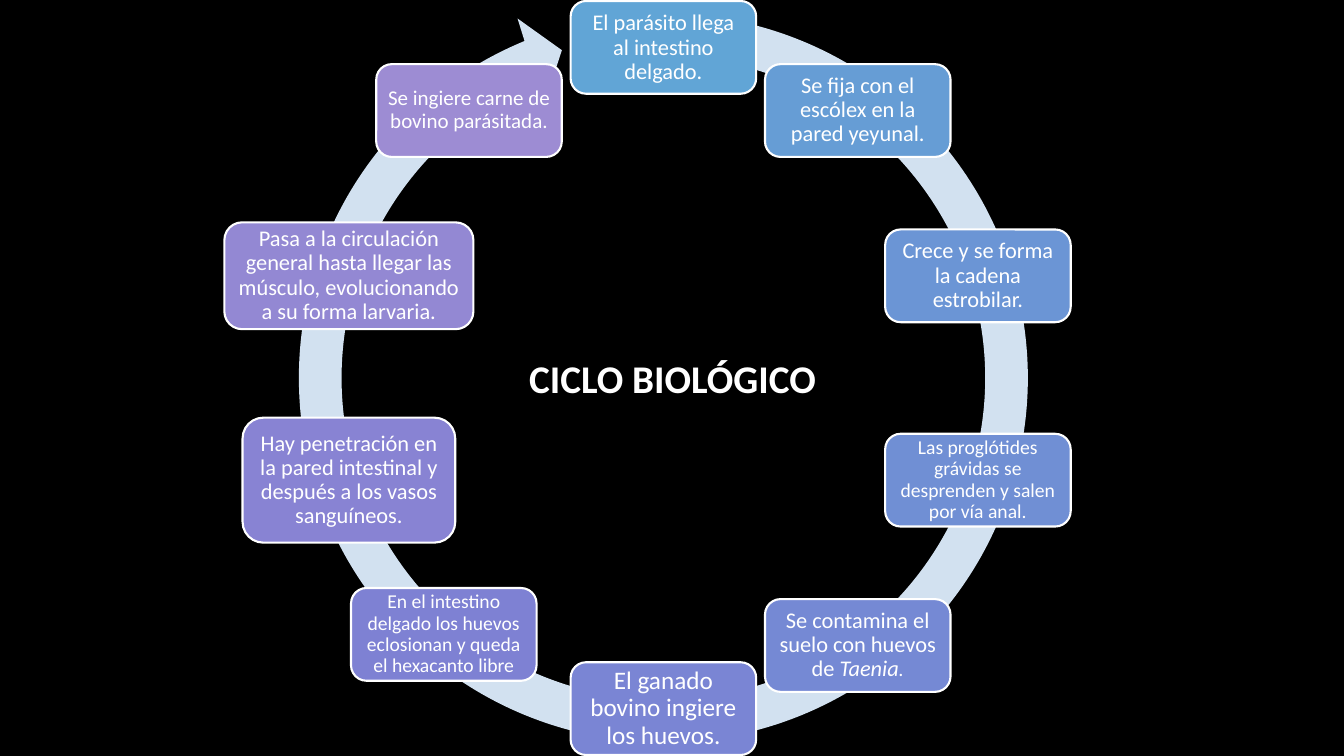
from math import cos, radians, sin

from pptx import Presentation
from pptx.dml.color import RGBColor
from pptx.enum.shapes import MSO_SHAPE
from pptx.enum.text import MSO_ANCHOR, MSO_AUTO_SIZE, PP_ALIGN
from pptx.util import Inches, Pt

BLACK = RGBColor(0x00, 0x00, 0x00)
WHITE = RGBColor(0xFF, 0xFF, 0xFF)
RING = RGBColor(0xD2, 0xE1, 0xF0)
STAGE_COLOURS = [
    RGBColor(0x61, 0xA5, 0xD6), RGBColor(0x66, 0x9D, 0xD5),
    RGBColor(0x6B, 0x95, 0xD5), RGBColor(0x70, 0x8F, 0xD4),
    RGBColor(0x75, 0x89, 0xD4), RGBColor(0x7A, 0x85, 0xD4),
    RGBColor(0x7E, 0x81, 0xD3), RGBColor(0x88, 0x83, 0xD3),
    RGBColor(0x93, 0x88, 0xD3), RGBColor(0x9D, 0x8C, 0xD3),
]
FONT = "Calibri"
CARD = (1.84, 0.92)

# Each stage, clockwise from the top: card size and runs (text, size, italic)
STAGES = [
    (CARD, [("El parásito llega al intestino delgado.", 16, False)]),
    (CARD, [("Se fija con el escólex en la pared yeyunal.", 16, False)]),
    (CARD, [("Crece y se forma la cadena estrobilar.", 16, False)]),
    (CARD, [("Las proglótides grávidas se desprenden y salen por vía anal.",
             14, False)]),
    (CARD, [("Se contamina el suelo con huevos de ", 16, False),
            ("Taenia", 16, True), (".", 14, True)]),
    (CARD, [("El ganado bovino ingiere los huevos.", 18, False)]),
    (CARD, [("En el intestino delgado los huevos eclosionan y queda "
             "el hexacanto libre", 14, False)]),
    ((2.11, 1.24), [("Hay penetración en la pared intestinal y después a los "
                     "vasos sanguíneos.", 16, False)]),
    ((2.47, 1.06), [("Pasa a la circulación general hasta llegar las músculo, "
                     "evolucionando a su forma larvaria.", 16, False)]),
    (CARD, [("Se ingiere carne de bovino parásitada.", 15, False)]),
]
SHIFTS = {6: (-0.25, -0.11)}  # stages moved off the regular circle


def write_runs(para, runs, bold=False):
    para.alignment = PP_ALIGN.CENTER
    for text, size, italic in runs:
        span = para.add_run()
        span.text = text
        span.font.name = FONT
        span.font.size = Pt(size)
        span.font.bold = bold
        span.font.italic = italic
        span.font.color.rgb = WHITE


def add_title(page, left, top, width, height):
    title = page.shapes.title
    title.left, title.top = Inches(left), Inches(top)
    title.width, title.height = Inches(width), Inches(height)
    frame = title.text_frame
    frame.word_wrap = True
    frame.auto_size = MSO_AUTO_SIZE.NONE
    frame.vertical_anchor = MSO_ANCHOR.MIDDLE
    write_runs(frame.paragraphs[0], [("CICLO BIOLÓGICO", 28, False)], bold=True)


def add_ring(page, left, top, side):
    ring = page.shapes.add_shape(MSO_SHAPE.CIRCULAR_ARROW, Inches(left),
                                 Inches(top), Inches(side), Inches(side))
    for index, value in enumerate([0.055, 3.307, 148.373, 167.682, 0.058]):
        ring.adjustments[index] = value
    ring.shadow.inherit = False
    ring.fill.solid()
    ring.fill.fore_color.rgb = RING
    ring.line.fill.background()


def add_card(page, left, top, width, height, colour, runs):
    card = page.shapes.add_shape(MSO_SHAPE.ROUNDED_RECTANGLE, Inches(left),
                                 Inches(top), Inches(width), Inches(height))
    card.shadow.inherit = False
    card.fill.solid()
    card.fill.fore_color.rgb = colour
    card.line.color.rgb = WHITE
    card.line.width = Pt(1.5)
    frame = card.text_frame
    frame.word_wrap = True
    frame.vertical_anchor = MSO_ANCHOR.MIDDLE
    inset = Inches(0.07 if runs[0][1] > 15 else 0.06)
    frame.margin_left = frame.margin_right = inset
    frame.margin_top = frame.margin_bottom = inset
    para = frame.paragraphs[0]
    para.line_spacing = 0.9
    write_runs(para, runs)
    return card


def add_cycle(page, left, top, side):
    """Ring with the stage cards spread evenly around its centre."""
    add_ring(page, left, top, side)
    centre_x, centre_y = left + side / 2, top + side / 2
    radius = 3.28
    cards = []
    for index, ((width, height), runs) in enumerate(STAGES):
        angle = radians(index * 360 / len(STAGES))
        shift_x, shift_y = SHIFTS.get(index, (0, 0))
        x = centre_x + radius * sin(angle) + shift_x - width / 2
        y = centre_y - radius * cos(angle) + shift_y - height / 2
        cards.append(add_card(page, x, y, width, height,
                              STAGE_COLOURS[index], runs))
    # The first stage keeps its text at the top
    first = cards[0].text_frame
    first.vertical_anchor = MSO_ANCHOR.TOP
    first.margin_top = Inches(0.06)


def main():
    deck = Presentation()
    deck.slide_width, deck.slide_height = Inches(13.33), Inches(7.5)
    page = deck.slides.add_slide(deck.slide_layouts.get_by_name("Title Only"))
    page.background.fill.solid()
    page.background.fill.fore_color.rgb = BLACK
    add_cycle(page, 2.73, -0.1, 7.7)
    add_title(page, 4.9, 3.01, 3.54, 1.48)
    deck.save("out.pptx")


if __name__ == "__main__":
    main()
